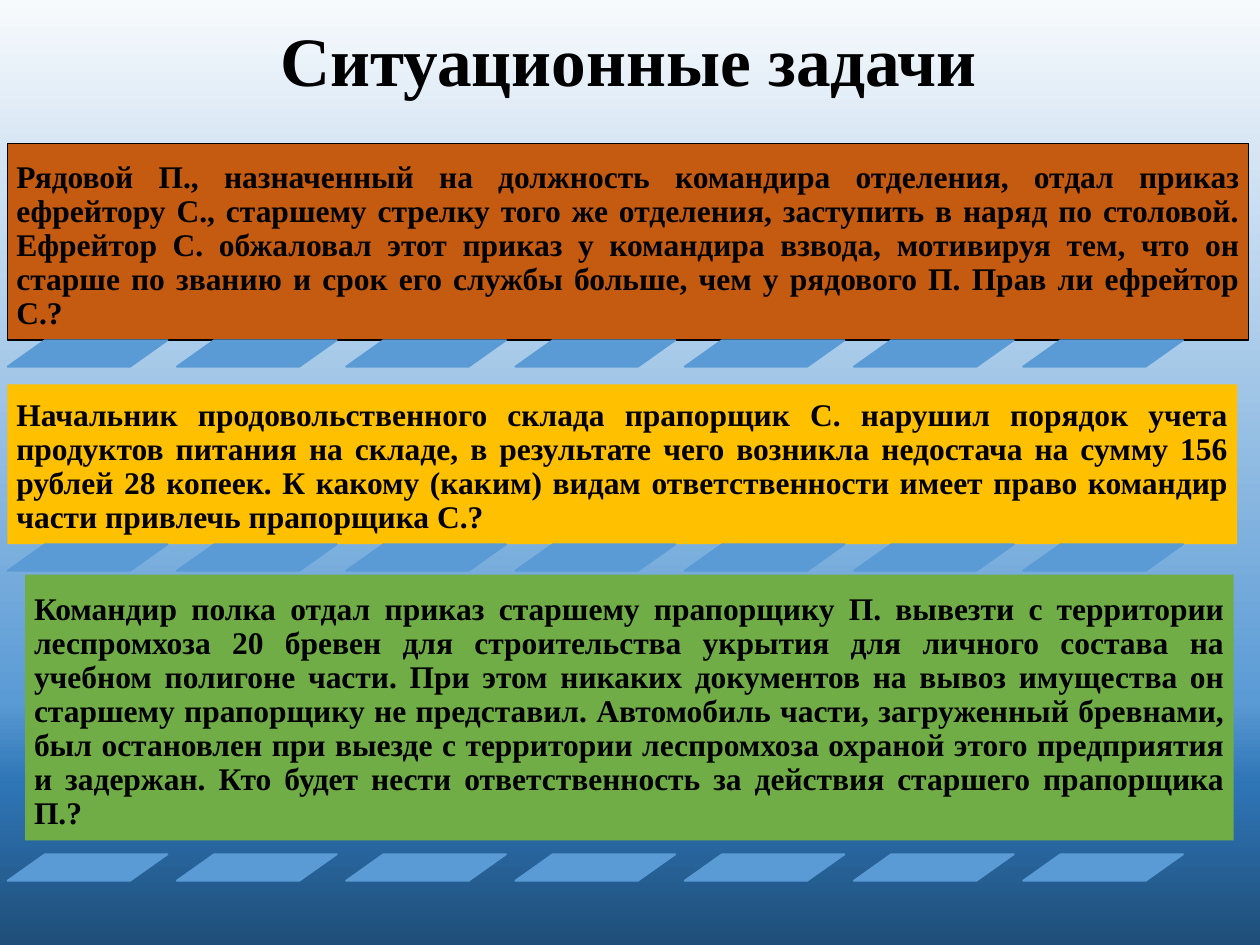
from copy import deepcopy
from dataclasses import dataclass

from pptx import Presentation
from pptx.dml.color import RGBColor
from pptx.enum.shapes import MSO_SHAPE
from pptx.enum.text import MSO_ANCHOR, PP_ALIGN
from pptx.oxml.ns import qn
from pptx.util import Inches, Pt


@dataclass(frozen=True)
class Theme:
    font: str = "Times New Roman"
    title_size: float = 39.6
    body_size: float = 18
    line_spacing: float = 0.9
    ink: str = "000000"
    orange: str = "C55A11"
    yellow: str = "FFC000"
    green: str = "70AD47"
    stripe: str = "5B9BD5"
    sky: tuple = ((0, "F7FAFD"), (0.74, "5B9BD5"), (0.83, "2E75B6"), (1, "1F4E79"))


class SlideBuilder:
    def __init__(self, page, theme):
        self.page = page
        self.theme = theme

    def background(self):
        fill = self.page.background.fill
        fill.gradient()
        fill.gradient_angle = 270
        stop_list = self.page.element.find(".//" + qn("a:gsLst"))
        for _ in range(len(self.theme.sky) - len(stop_list)):
            stop_list.append(deepcopy(stop_list[0]))
        for stop, (position, color) in zip(fill.gradient_stops, self.theme.sky):
            stop.position = position
            stop.color.rgb = RGBColor.from_string(color)

    def add_text(self, box, text, size, align, anchor):
        frame = box.text_frame
        frame.word_wrap = True
        frame.vertical_anchor = anchor
        para = frame.paragraphs[0]
        para.alignment = align
        para.line_spacing = self.theme.line_spacing
        span = para.add_run()
        span.text = text
        span.font.name = self.theme.font
        span.font.size = Pt(size)
        span.font.bold = True
        span.font.color.rgb = RGBColor.from_string(self.theme.ink)

    def shape(self, kind, bounds, fill, line=None, line_width=1):
        shape = self.page.shapes.add_shape(kind, *map(Inches, bounds))
        shape.shadow.inherit = False
        shape.fill.solid()
        shape.fill.fore_color.rgb = RGBColor.from_string(fill)
        if line:
            shape.line.color.rgb = RGBColor.from_string(line)
            shape.line.width = Pt(line_width)
        else:
            shape.line.fill.background()
        return shape

    def title(self, text, bounds):
        box = self.page.shapes.add_textbox(*map(Inches, bounds))
        self.add_text(box, text, self.theme.title_size, PP_ALIGN.CENTER, MSO_ANCHOR.MIDDLE)

    def task(self, text, bounds, fill, line=None):
        box = self.shape(MSO_SHAPE.RECTANGLE, bounds, fill, line, 0.75)
        frame = box.text_frame
        frame.margin_left = frame.margin_right = Inches(0.07)
        frame.margin_top = frame.margin_bottom = Inches(0.07)
        self.add_text(box, text, self.theme.body_size, PP_ALIGN.JUSTIFY, MSO_ANCHOR.BOTTOM)

    def stripes(self, top, count=7, first=0.06, last=8.12):
        pitch = (last - first) / (count - 1)
        for index in range(count):
            bounds = (first + index * pitch, top, 1.27, 0.21)
            stripe = self.shape(
                MSO_SHAPE.PARALLELOGRAM, bounds, self.theme.stripe, self.theme.stripe
            )
            stripe.adjustments[0] = 1.41


def main():
    theme = Theme()
    deck = Presentation()
    deck.slide_width = Inches(10)
    deck.slide_height = Inches(7.5)
    builder = SlideBuilder(deck.slides.add_slide(deck.slide_layouts[6]), theme)

    tasks = [
        (
            "Рядовой П., назначенный на должность командира отделения, отдал приказ "
            "ефрейтору С., старшему стрелку того же отделения, заступить в наряд по "
            "столовой. Ефрейтор С. обжаловал этот приказ у командира взвода, мотивируя "
            "тем, что он старше по званию и срок его службы больше, чем у рядового П. "
            "Прав ли ефрейтор С.?",
            (0.06, 1.14, 9.85, 1.56), theme.orange, theme.ink, 2.7,
        ),
        (
            "Начальник продовольственного склада прапорщик С. нарушил порядок учета "
            "продуктов питания на складе, в результате чего возникла недостача на сумму "
            "156 рублей 28 копеек. К какому (каким) видам ответственности имеет право "
            "командир части привлечь прапорщика С.?",
            (0.06, 3.05, 9.76, 1.27), theme.yellow, None, 4.32,
        ),
        (
            "Командир полка отдал приказ старшему прапорщику П. вывезти с территории "
            "леспромхоза 20 бревен для строительства укрытия для личного состава на "
            "учебном полигоне части. При этом никаких документов на вывоз имущества он "
            "старшему прапорщику не представил. Автомобиль части, загруженный бревнами, "
            "был остановлен при выезде с территории леспромхоза охраной этого "
            "предприятия и задержан. Кто будет нести ответственность за действия "
            "старшего прапорщика П.?",
            (0.2, 4.56, 9.59, 2.11), theme.green, None, 6.78,
        ),
    ]

    builder.background()
    builder.title("Ситуационные задачи", (0.68, 0.15, 8.62, 0.72))
    for text, bounds, fill, line, stripes_top in tasks:
        builder.task(text, bounds, fill, line)
        builder.stripes(stripes_top)
    deck.save("out.pptx")


if __name__ == "__main__":
    main()
